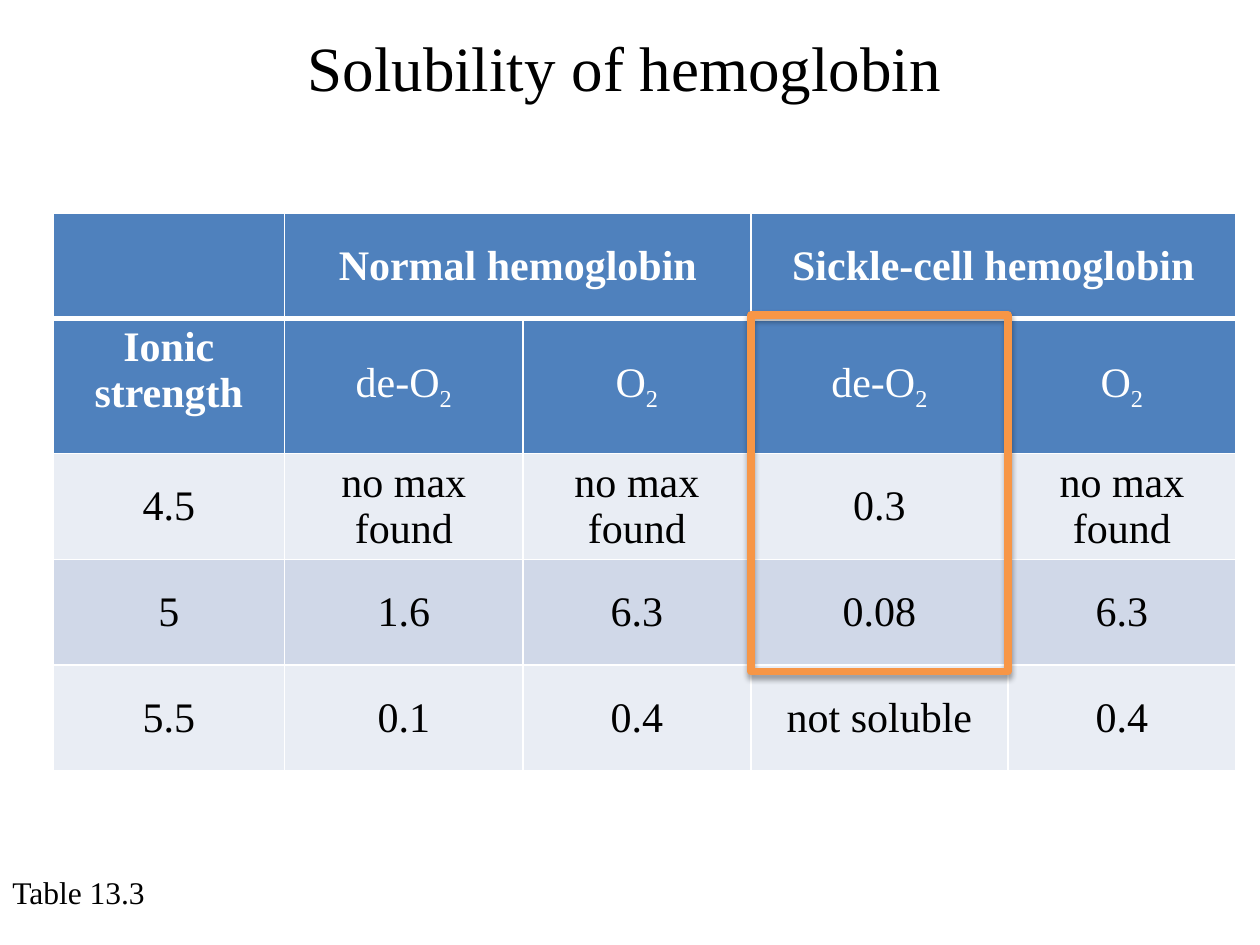
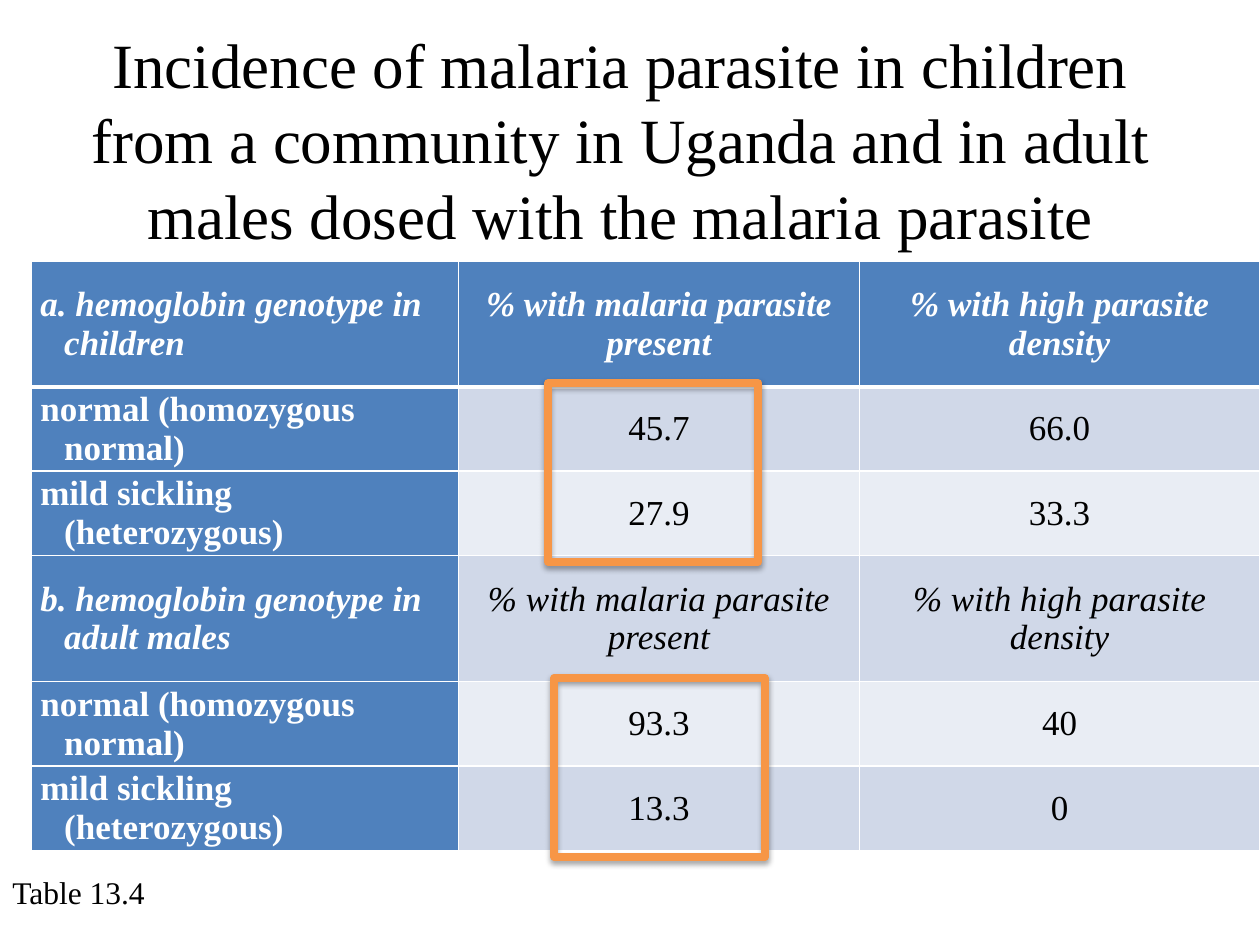
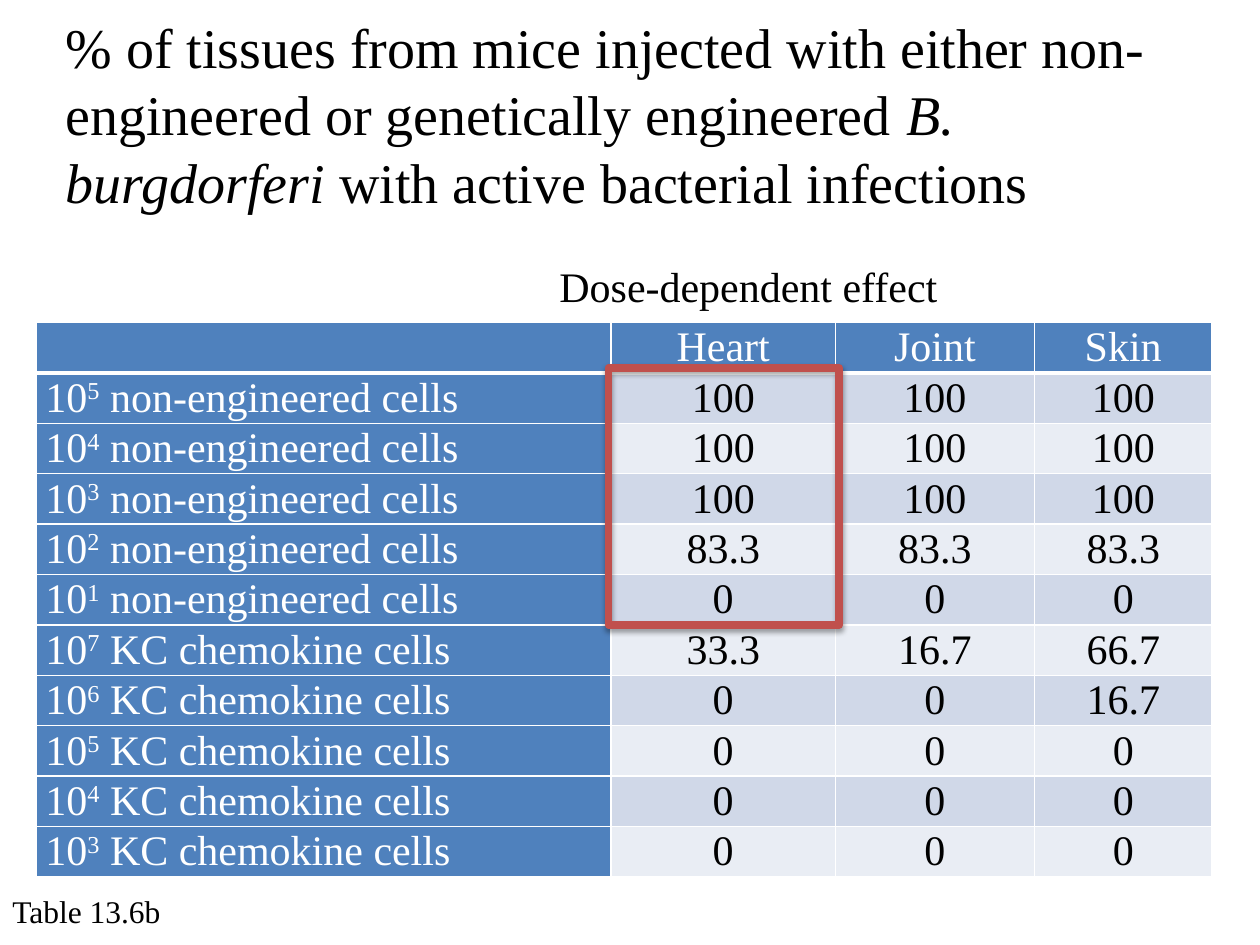
from dataclasses import dataclass

from lxml import etree
from pptx import Presentation
from pptx.dml.color import RGBColor
from pptx.enum.shapes import MSO_SHAPE
from pptx.enum.text import MSO_ANCHOR, MSO_AUTO_SIZE, PP_ALIGN
from pptx.oxml.ns import qn
from pptx.util import Emu, Inches, Pt

LEFT, CENTER = PP_ALIGN.LEFT, PP_ALIGN.CENTER
TOP, MIDDLE = MSO_ANCHOR.TOP, MSO_ANCHOR.MIDDLE
FIXED = MSO_AUTO_SIZE.NONE
RECTANGLE = MSO_SHAPE.RECTANGLE
TITLE_ONLY = 5


@dataclass(frozen=True)
class Theme:
    font: str = "Times New Roman"
    ink: str = "000000"
    paper: str = "FFFFFF"
    head: str = "4F81BD"
    bands: tuple = ("E9EDF4", "D0D8E8")
    orange: str = "F79646"
    red: str = "C0504D"
    title: int = 36
    long_title: int = 32
    body: int = 24
    dense: int = 20
    caption: int = 18
    thin: int = 1
    thick: int = 3
    frame: float = 4.5


THEME = Theme()
SUB = {"baseline": -25000}
SUPER = {"baseline": 30000}


def set_values(target, values):
    for name, value in values.items():
        setattr(target, name, value)


def write_spans(para, spans, size, color, **emphasis):
    if isinstance(spans, str):
        spans = [(spans, {})]
    for text, changes in spans:
        span = para.add_run()
        span.text = text
        style = {"name": THEME.font, "size": Pt(size), "bold": False, "italic": False}
        style.update(emphasis)
        style.update(changes)
        baseline = style.pop("baseline", None)
        set_values(span.font, style)
        span.font.color.rgb = RGBColor.from_string(color)
        if baseline:
            span.font._element.set("baseline", str(baseline))


def place(shape, box):
    names = ("left", "top", "width", "height")
    set_values(shape, {name: Inches(value) for name, value in zip(names, box)})


def fill_text(shape, spans, size, align, wrap=True):
    frame = shape.text_frame
    set_values(frame, {"word_wrap": wrap, "auto_size": FIXED, "vertical_anchor": TOP})
    para = frame.paragraphs[0]
    para.alignment = align
    write_spans(para, spans, size, THEME.ink)


def add_page(deck, title, box, size=THEME.title, align=CENTER):
    page = deck.slides.add_slide(deck.slide_layouts[TITLE_ONLY])
    place(page.shapes.title, box)
    fill_text(page.shapes.title, title, size, align)
    return page


def add_label(page, text, box, size=THEME.caption, align=LEFT, wrap=False):
    label = page.shapes.add_textbox(*map(Inches, box))
    fill_text(label, text, size, align, wrap)


def add_highlight(page, box, color=THEME.orange):
    frame = page.shapes.add_shape(RECTANGLE, *map(Inches, box))
    frame.fill.background()
    frame.line.color.rgb = RGBColor.from_string(color)
    frame.line.width = Pt(THEME.frame)
    frame.shadow.inherit = False
    effects = frame._element.spPr.find(qn("a:effectLst"))
    shadow = etree.SubElement(effects, qn("a:outerShdw"), blurRad="40000",
                              dist="23000", dir="5400000", rotWithShape="0")
    tint = etree.SubElement(shadow, qn("a:srgbClr"), val=THEME.ink)
    etree.SubElement(tint, qn("a:alpha"), val="35000")


def add_borders(cell, top, bottom):
    properties = cell._tc.get_or_add_tcPr()
    widths = {"L": THEME.thin, "R": THEME.thin, "T": top, "B": bottom}
    for index, (side, width) in enumerate(widths.items()):
        line = etree.Element(qn(f"a:ln{side}"), w=str(Pt(width)))
        fill = etree.SubElement(line, qn("a:solidFill"))
        etree.SubElement(fill, qn("a:srgbClr"), val=THEME.paper)
        properties.insert(index, line)


def no_emphasis(row, column):
    return {}


def add_grid(page, origin, widths, heights, rows, size, head_rows=1,
             head_columns=1, hanging=0, emphasis=no_emphasis):
    box = (*origin, sum(widths), sum(heights))
    grid = page.shapes.add_table(len(rows), len(widths), *map(Inches, box)).table
    for column, width in zip(grid.columns, widths):
        column.width = Inches(width)
    for line, height in zip(grid.rows, heights):
        line.height = Inches(height)
    for row, contents in enumerate(rows):
        for column, content in enumerate(contents):
            cell = grid.cell(row, column)
            is_head = row < head_rows or column < head_columns
            set_values(cell, {"margin_left": Inches(0.07), "margin_right": Inches(0.07),
                              "margin_top": Emu(0), "margin_bottom": Emu(0),
                              "vertical_anchor": MIDDLE})
            cell.fill.solid()
            fill = THEME.head if is_head else THEME.bands[row % 2]
            cell.fill.fore_color.rgb = RGBColor.from_string(fill)
            add_borders(cell, THEME.thick if row == 1 else THEME.thin,
                        THEME.thick if row == 0 else THEME.thin)
            if not content:
                continue
            para = cell.text_frame.paragraphs[0]
            para.alignment = LEFT if column < head_columns else CENTER
            if hanging and column < head_columns:
                properties = para._p.get_or_add_pPr()
                properties.set("marL", str(Inches(hanging)))
                properties.set("indent", str(-Inches(hanging)))
            write_spans(para, content, size, THEME.paper if is_head else THEME.ink,
                        **emphasis(row, column))
    return grid


def solubility_page(deck):
    page = add_page(deck, "Solubility of hemoglobin", (0.42, 0.18, 9.07, 0.71))
    add_label(page, "Table 13.3", (0, 6.88, 1.26, 0.4))
    without_oxygen = [("de-O", {}), ("2", SUB)]
    with_oxygen = [("O", {}), ("2", SUB)]
    missing = "no max found"
    rows = [
        ["", "Normal hemoglobin", "", "Sickle-cell hemoglobin", ""],
        ["Ionic strength"] + [without_oxygen, with_oxygen] * 2,
        ["4.5", missing, missing, "0.3", missing],
        ["5", "1.6", "6.3", "0.08", "6.3"],
        ["5.5", "0.1", "0.4", "not soluble", "0.4"],
    ]
    grid = add_grid(page, (0.42, 1.69), (1.84, 1.89, 1.81, 2.04, 1.81),
                    (0.84, 1.07, 0.84, 0.84, 0.84), rows, THEME.body,
                    head_rows=2, head_columns=0,
                    emphasis=lambda row, column: {"bold": row == 0 or (row, column) == (1, 0)})
    for column in (1, 3):
        grid.cell(0, column).merge(grid.cell(0, column + 1))
    grid.cell(1, 0).margin_bottom = Inches(0.25)
    add_highlight(page, (5.96, 2.5, 2.04, 2.83))


def malaria_page(deck):
    page = add_page(deck, "Incidence of malaria parasite in children from a community "
                    "in Uganda and in adult males dosed with the malaria parasite",
                    (0.42, 0.15, 9.01, 1.92))
    measures = ["% with malaria parasite present", "% with high parasite density"]
    normal, mild = "normal (homozygous normal)", "mild sickling (heterozygous)"
    rows = [
        ["a. hemoglobin genotype in children"] + measures,
        [normal, "45.7", "66.0"],
        [mild, "27.9", "33.3"],
        ["b. hemoglobin genotype in adult males"] + measures,
        [normal, "93.3", "40"],
        [mild, "13.3", "0"],
    ]
    add_grid(page, (0.25, 2.07), (3.39, 3.18, 3.18), (1, 0.67, 0.67) * 2, rows,
             THEME.dense, hanging=0.19,
             emphasis=lambda row, column: {"bold": row == 0 or column == 0,
                                           "italic": row % 3 == 0})
    add_label(page, "Table 13.4", (0, 6.88, 1.33, 0.4))
    for left, top in ((4.35, 3.04), (4.4, 5.38)):
        add_highlight(page, (left, top, 1.67, 1.42))


def infection_page(deck):
    title = [("% of tissues from mice injected with either non-engineered or "
              "genetically engineered ", {}),
             ("B. burgdorferi ", {"italic": True}),
             ("with active bacterial infections", {})]
    page = add_page(deck, title, (0.42, 0.05, 9.19, 1.72), THEME.long_title, LEFT)
    add_label(page, "Table 13.6b", (0, 7.03, 1.45, 0.4))
    doses = [
        ("5", "non-engineered", "100", "100", "100"),
        ("4", "non-engineered", "100", "100", "100"),
        ("3", "non-engineered", "100", "100", "100"),
        ("2", "non-engineered", "83.3", "83.3", "83.3"),
        ("1", "non-engineered", "0", "0", "0"),
        ("7", "KC chemokine", "33.3", "16.7", "66.7"),
        ("6", "KC chemokine", "0", "0", "16.7"),
        ("5", "KC chemokine", "0", "0", "0"),
        ("4", "KC chemokine", "0", "0", "0"),
        ("3", "KC chemokine", "0", "0", "0"),
    ]
    rows = [["", "Heart", "Joint", "Skin"]]
    for power, strain, *shares in doses:
        rows.append([[("10", {}), (power, SUPER), (f" {strain} cells", {})], *shares])
    add_grid(page, (0.29, 2.56), (4.56, 1.78, 1.58, 1.41), [0.4] * len(rows),
             rows, THEME.body)
    add_label(page, "Dose-dependent effect", (2.93, 2.02, 6.02, 0.5),
              THEME.body, CENTER, True)
    add_highlight(page, (4.83, 2.92, 1.83, 2.04), THEME.red)


def main():
    deck = Presentation()
    set_values(deck, {"slide_width": Inches(10), "slide_height": Inches(7.5)})
    for build in (solubility_page, malaria_page, infection_page):
        build(deck)
    deck.save("out.pptx")


if __name__ == "__main__":
    main()
